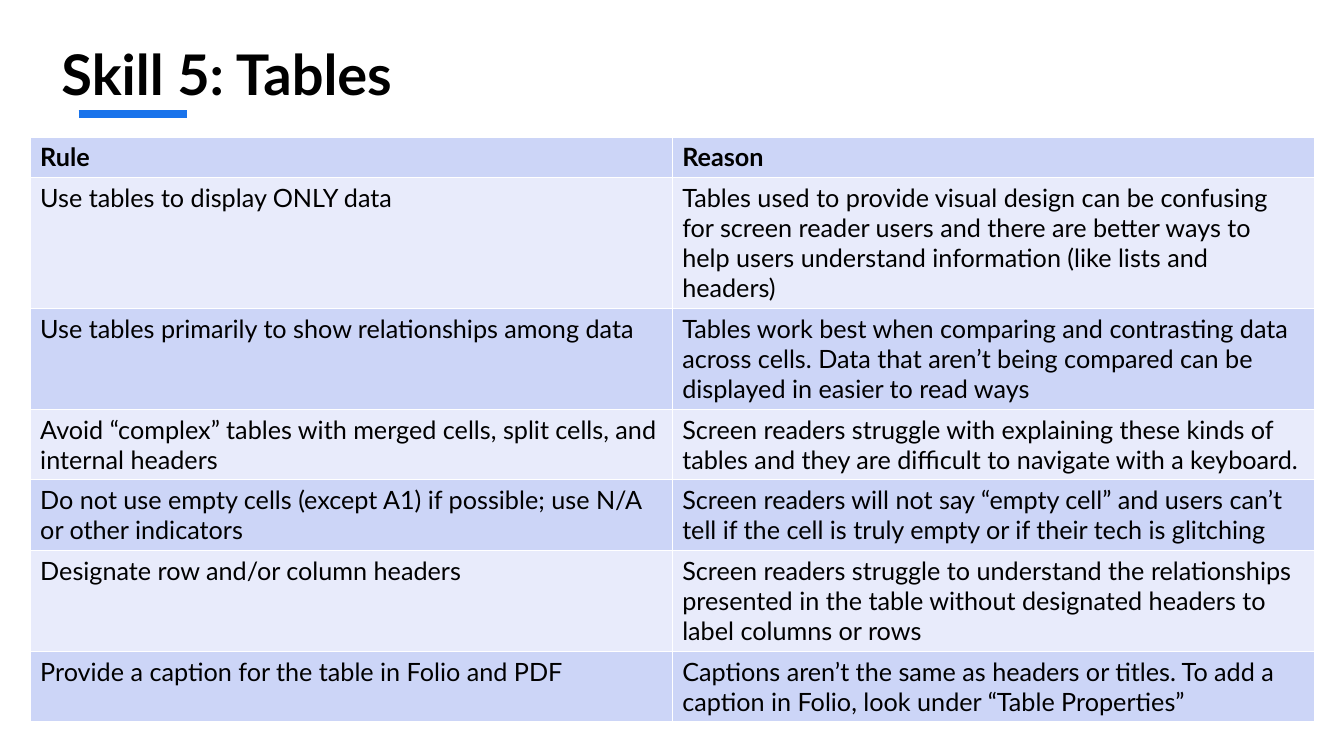
import pptx
import pptx.dml.color
import pptx.enum.shapes
import pptx.enum.text
import pptx.oxml
import pptx.oxml.ns
import pptx.util
from pptx.util import Cm

ROWS = [
    ("Rule", "Reason", 1),
    ("Use tables to display ONLY data",
     "Tables used to provide visual design can be confusing for screen reader users and there are "
     "better ways to help users understand information (like lists and headers)", 4),
    ("Use tables primarily to show relationships among data",
     "Tables work best when comparing and contrasting data across cells. Data that aren’t being "
     "compared can be displayed in easier to read ways", 3),
    ("Avoid “complex” tables with merged cells, split cells, and internal headers",
     "Screen readers struggle with explaining these kinds of tables and they are difficult to "
     "navigate with a keyboard.", 2),
    ("Do not use empty cells (except A1) if possible; use N/A or other indicators",
     "Screen readers will not say “empty cell” and users can’t tell if the cell is truly empty or "
     "if their tech is glitching", 2),
    ("Designate row and/or column headers",
     "Screen readers struggle to understand the relationships presented in the table without "
     "designated headers to label columns or rows", 3),
    ("Provide a caption for the table in Folio and PDF",
     "Captions aren’t the same as headers or titles. To add a caption in Folio, look under “Table "
     "Properties”", 2),
]


def color(value):
    return pptx.dml.color.RGBColor.from_string(value)


def write(frame, text, font="Lato", size=18, bold=False, ink="000000"):
    frame.word_wrap = True
    span = frame.paragraphs[0].add_run()
    span.text = text
    span.font.name = font
    span.font.size = pptx.util.Pt(size)
    span.font.bold = bold
    span.font.color.rgb = color(ink)


class RulesPage:
    accent = "1973EB"
    bands = ("CCD5F7", "E8EBFB")
    border = "FFFFFF"
    line_height = 0.76
    row_padding = 0.25

    def __init__(self, page):
        self.page = page

    def title(self, text, left, top, width, height):
        box = self.page.shapes.add_textbox(Cm(left), Cm(top), Cm(width), Cm(height))
        box.text_frame.vertical_anchor = pptx.enum.text.MSO_ANCHOR.TOP
        write(box.text_frame, text, size=40, bold=True)

    def underline(self, left, top, width):
        line = self.page.shapes.add_connector(
            pptx.enum.shapes.MSO_CONNECTOR.STRAIGHT, Cm(left), Cm(top), Cm(left + width), Cm(top))
        line.line.color.rgb = color(self.accent)
        line.line.width = pptx.util.Pt(6)
        properties = line._element.spPr
        properties.append(properties.makeelement(pptx.oxml.ns.qn("a:effectLst"), {}))

    def outline(self, cell):
        properties = cell._tc.get_or_add_tcPr()
        for index, side in enumerate("LRTB"):
            properties.insert(index, pptx.oxml.parse_xml(
                f'<a:ln{side} {pptx.oxml.ns.nsdecls("a")} w="12700"><a:solidFill>'
                f'<a:srgbClr val="{self.border}"/></a:solidFill></a:ln{side}>'))

    def table(self, rows, left, top, width):
        heights = [self.row_padding + self.line_height * lines for *_, lines in rows]
        table = self.page.shapes.add_table(
            len(rows), 2, Cm(left), Cm(top), Cm(width), Cm(sum(heights))).table
        for row_index, (rule, reason, _) in enumerate(rows):
            table.rows[row_index].height = Cm(heights[row_index])
            for column_index, text in enumerate((rule, reason)):
                cell = table.cell(row_index, column_index)
                cell.fill.solid()
                cell.fill.fore_color.rgb = color(self.bands[row_index % 2])
                self.outline(cell)
                write(cell.text_frame, text, bold=row_index == 0)


def main():
    deck = pptx.Presentation()
    deck.slide_width, deck.slide_height = Cm(33.87), Cm(19.05)
    page = RulesPage(deck.slides.add_slide(deck.slide_layouts[6]))
    page.underline(1.98, 2.87, 2.72)
    page.title("Skill 5: Tables", 1.3, 0.86, 30.25, 3.05)
    page.table(ROWS, 0.76, 3.45, 32.36)
    deck.save("out.pptx")


if __name__ == "__main__":
    main()
